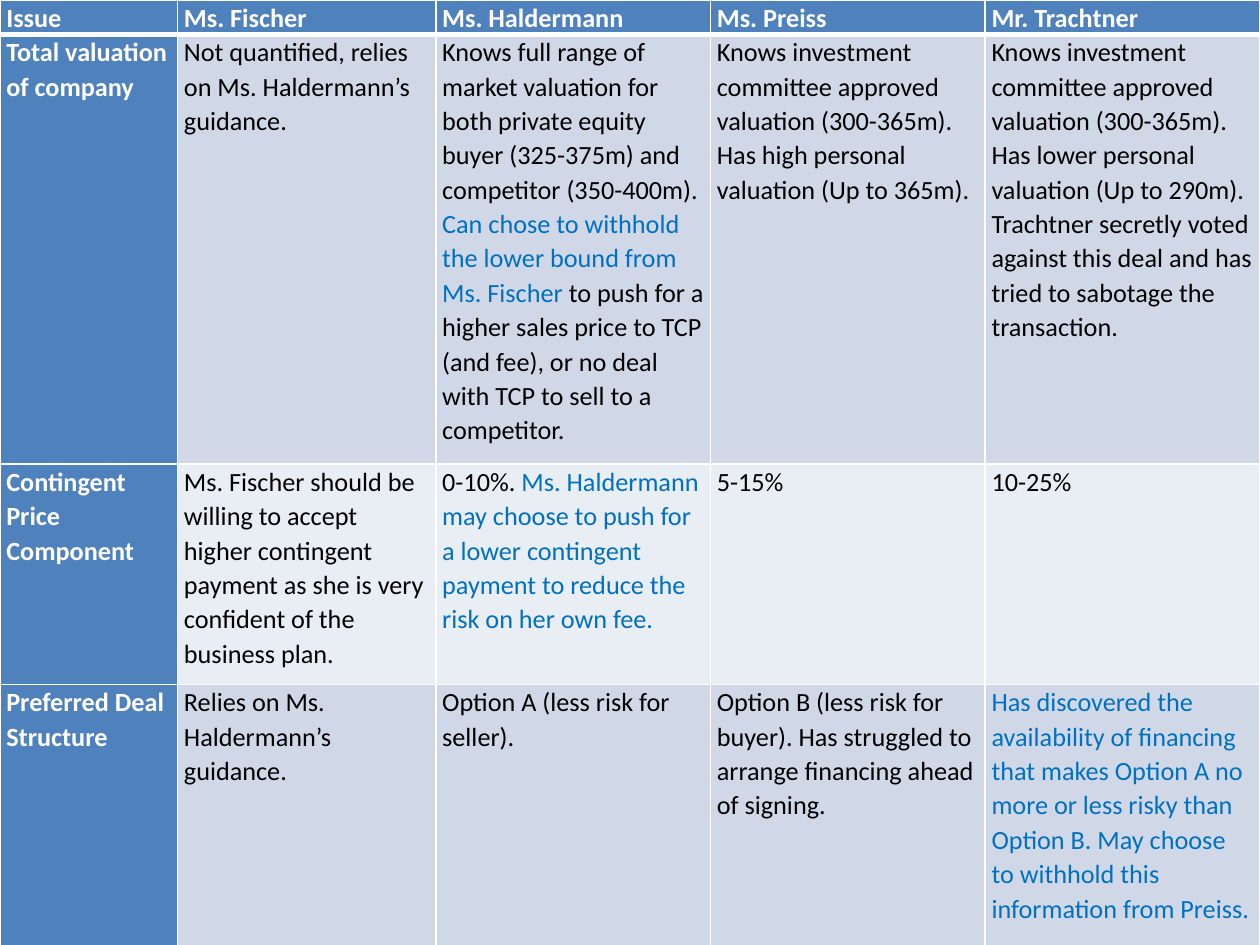
from lxml import etree
from pptx import Presentation
from pptx.dml.color import RGBColor
from pptx.enum.text import PP_ALIGN
from pptx.oxml.ns import qn
from pptx.util import Inches, Pt

JUSTIFY, LEFT = PP_ALIGN.JUSTIFY, PP_ALIGN.LEFT
BLANK = 6
HEX = {"head": "4F81BD", "odd": "D0D8E8", "even": "E9EDF4",
       "white": "FFFFFF", "black": "000000", "blue": "0070C0"}
COLS = [1.41, 2.05, 2.18, 2.18, 2.18]
ROWS = [0.26, 3.41, 1.75, 2.2]
INSETS = {"margin_left": Inches(0.05), "margin_right": Inches(0.05),
          "margin_top": 0, "margin_bottom": 0}
SPACING = {"line_spacing": 1.07, "space_after": Pt(8)}

# Within a cell, each "|" switches between black and blue text.
ISSUES = [
    ["Issue ", "Ms. Fischer", "Ms. Haldermann", "Ms. Preiss", "Mr. Trachtner"],
    ["Total valuation of company",
     "Not quantified, relies on Ms. Haldermann’s guidance.",
     "Knows full range of market valuation for both private equity buyer "
     "(325-375m) and competitor (350-400m). |Can chose to withhold the lower "
     "bound from Ms. Fischer |to push for a higher sales price to TCP (and "
     "fee), or no deal with TCP to sell to a competitor.",
     "Knows investment committee approved valuation (300-365m). Has high "
     "personal valuation (Up to 365m).",
     "Knows investment committee approved valuation (300-365m). Has lower "
     "personal valuation (Up to 290m). Trachtner secretly voted against this "
     "deal and has tried to sabotage the transaction."],
    ["Contingent Price Component",
     "Ms. Fischer should be willing to accept higher contingent payment as "
     "she is very confident of the business plan.",
     "0-10%. |Ms. Haldermann may choose to push for a lower contingent "
     "payment to reduce the risk on her own fee.",
     "5-15%", "10-25%"],
    ["Preferred Deal Structure",
     "Relies on Ms. Haldermann’s guidance.",
     "Option A (less risk for seller).",
     "Option B (less risk for buyer). Has struggled to arrange financing "
     "ahead of signing.",
     "|Has discovered the availability of financing that makes Option A no "
     "more or less risky than Option B. May choose to withhold this "
     "information from Preiss."],
]


def rule(cell, side, width):
    """Draw a white border of the given point width on one side of a cell."""
    line = etree.SubElement(cell._tc.get_or_add_tcPr(), qn(f"a:ln{side}"),
                            w=str(Pt(width)))
    fill = etree.SubElement(line, qn("a:solidFill"))
    etree.SubElement(fill, qn("a:srgbClr"), val=HEX["white"])


deck = Presentation()
deck.slide_width, deck.slide_height = Inches(10), Inches(7.5)
slide = deck.slides.add_slide(deck.slide_layouts[BLANK])
table = slide.shapes.add_table(len(ROWS), len(COLS), 0, 0, Inches(sum(COLS)),
                               Inches(sum(ROWS))).table
table.first_col = True
for col, width in zip(table.columns, COLS):
    col.width = Inches(width)
for row, height in zip(table.rows, ROWS):
    row.height = Inches(height)

for r, issue in enumerate(ISSUES):
    for c, text in enumerate(issue):
        cell = table.cell(r, c)
        for name, value in INSETS.items():
            setattr(cell, name, value)
        top, base = (3 if r == 1 else 1), (3 if r == 0 else 1)
        for side, width in zip("LRTB", (1, 1, top, base)):
            rule(cell, side, width)

        head = r == 0 or c == 0
        band = "head" if head else "odd" if r % 2 else "even"
        cell.fill.solid()
        cell.fill.fore_color.rgb = RGBColor.from_string(HEX[band])

        para = cell.text_frame.paragraphs[0]
        para.alignment = LEFT if r else JUSTIFY
        for name, value in SPACING.items():
            setattr(para, name, value)
        for i, part in enumerate(text.split("|")):
            if not part:
                continue
            run = para.add_run()
            run.text = part
            tint = "white" if head else "blue" if i % 2 else "black"
            font = {"name": "Calibri", "size": Pt(15), "bold": head}
            for name, value in font.items():
                setattr(run.font, name, value)
            run.font.color.rgb = RGBColor.from_string(HEX[tint])

deck.save("out.pptx")
